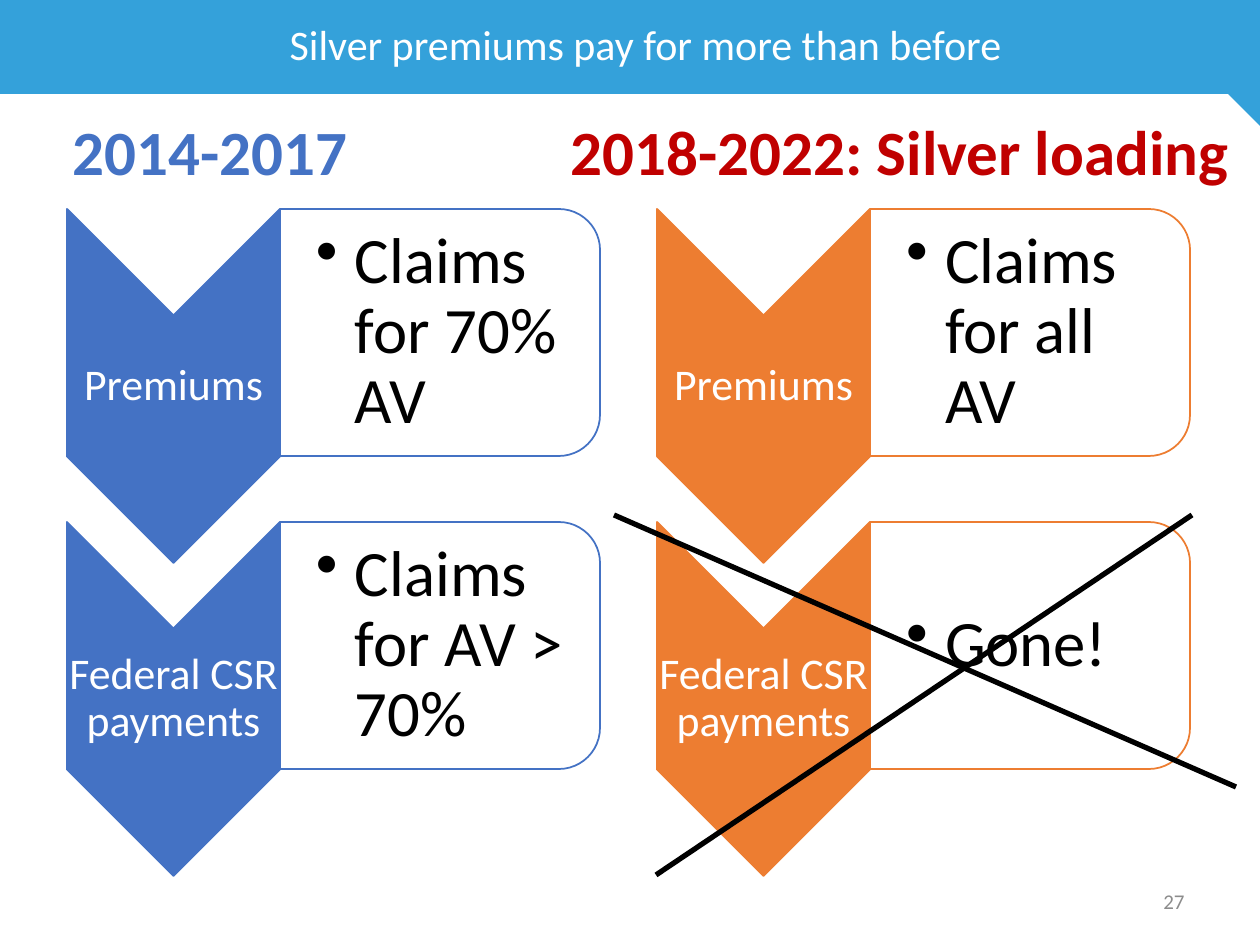
from lxml import etree
from pptx import Presentation
from pptx.dml.color import RGBColor
from pptx.enum.shapes import MSO_CONNECTOR, MSO_SHAPE
from pptx.enum.text import MSO_ANCHOR, PP_ALIGN
from pptx.oxml.ns import qn
from pptx.util import Pt

RECT, TRIANGLE = MSO_SHAPE.RECTANGLE, MSO_SHAPE.RIGHT_TRIANGLE
CHEVRON, ROUNDED = MSO_SHAPE.CHEVRON, MSO_SHAPE.ROUND_2_SAME_RECTANGLE
STRAIGHT = MSO_CONNECTOR.STRAIGHT
TOP, MIDDLE = MSO_ANCHOR.TOP, MSO_ANCHOR.MIDDLE
LEFT, CENTER = PP_ALIGN.LEFT, PP_ALIGN.CENTER

FONT = "Calibri"
SKY, BLUE, ORANGE, RED = "34A1DA", "4472C4", "ED7D31", "C00000"
WHITE, BLACK, GRAY = "FFFFFF", "000000", "8C8C8C"
CHEVRON_W, CHEVRON_H = 213, 354
BOX_W, BOX_H = 320, 247
ROW_PITCH = 313


def px(n):
    return round(n * 914400 / 126)


def rgb(value):
    return RGBColor.from_string(value)


def add_shape(s, kind, x, y, w, h, fill, line=None, rotation=0):
    if rotation == 90:
        x, y, w, h = x + (w - h) / 2, y + (h - w) / 2, h, w
    sp = s.shapes.add_shape(kind, px(x), px(y), px(w), px(h))
    sp.rotation = rotation
    sp.shadow.inherit = False
    sp.fill.solid()
    sp.fill.fore_color.rgb = rgb(fill)
    if line:
        sp.line.color.rgb = rgb(line)
        sp.line.width = Pt(1)
    else:
        sp.line.fill.background()
    return sp


def add_text(s, text, x, y, w, h, size, color, bold=False, align=LEFT,
             anchor=MIDDLE, insets=(13, 6, 13, 6), spacing=None, hang=0, wrap=True):
    tf = s.shapes.add_textbox(px(x), px(y), px(w), px(h)).text_frame
    tf.word_wrap = wrap
    tf.vertical_anchor = anchor
    tf.margin_left, tf.margin_top, tf.margin_right, tf.margin_bottom = map(px, insets)
    p = tf.paragraphs[0]
    if hang:
        pPr = p._p.get_or_add_pPr()
        pPr.set("marL", str(px(hang)))
        pPr.set("indent", str(-px(hang)))
        etree.SubElement(pPr, qn("a:buChar")).set("char", "•")
    p.alignment = align
    if spacing:
        p.line_spacing = spacing
    r = p.add_run()
    r.text = text
    r.font.name, r.font.size, r.font.bold = FONT, Pt(size), bold
    r.font.color.rgb = rgb(color)


def add_line(s, x1, y1, x2, y2):
    c = s.shapes.add_connector(STRAIGHT, px(x1), px(y1), px(x2), px(y2))
    c.line.color.rgb = rgb(BLACK)
    c.line.width = Pt(3)
    etree.SubElement(c._element.spPr, qn("a:effectLst"))


def add_header(s, x, y, w, h, title):
    add_shape(s, RECT, x, y, w, h, SKY)
    add_shape(s, TRIANGLE, x + w - 32, y + h, 32, 32, SKY, rotation=180)
    add_text(s, title, x + 67, y, w - 135, h, 24, WHITE, align=CENTER,
             insets=(45, 6, 13, 6), spacing=0.9)


def add_step(s, x, y, color, label, detail):
    notch = CHEVRON_W // 2
    add_shape(s, CHEVRON, x, y, CHEVRON_W, CHEVRON_H, color, color, 90)
    add_text(s, label, x, y + notch, CHEVRON_W, CHEVRON_H - 2 * notch, 25, WHITE,
             align=CENTER, insets=(2, 2, 2, 2), spacing=0.9)
    add_shape(s, ROUNDED, x + CHEVRON_W, y, BOX_W, BOX_H, WHITE, color, 90)
    add_text(s, detail, x + CHEVRON_W, y + 12, BOX_W - 12, BOX_H - 24, 37, BLACK,
             insets=(36, 3, 3, 3), spacing=0.9, hang=39)


def add_column(s, x, y, color, steps):
    for i, (label, detail) in enumerate(steps):
        add_step(s, x, y + i * ROW_PITCH, color, label, detail)


def add_cross(s, x, y):
    add_line(s, x, y, x + 622, y + 272)
    add_line(s, x + 578, y, x + 42, y + 360)


def main():
    prs = Presentation()
    prs.slide_width, prs.slide_height = px(1260), px(945)
    s = prs.slides.add_slide(prs.slide_layouts[6])
    add_header(s, 0, 0, 1260, 94, "Silver premiums pay for more than before")
    add_column(s, 67, 209, BLUE, [("Premiums", "Claims for 70% AV"),
                                  ("Federal CSR payments", "Claims for AV > 70%")])
    add_column(s, 657, 209, ORANGE, [("Premiums", "Claims for all AV"),
                                     ("Federal CSR payments", "Gone!")])
    add_text(s, "27", 1138, 876, 72, 50, 12, GRAY, align=CENTER)
    add_text(s, "2014-2017", 60, 107, 302, 89, 36, BLUE, bold=True, anchor=TOP, wrap=False)
    add_text(s, "2018-2022: Silver loading", 558, 107, 746, 89, 36, RED, bold=True, anchor=TOP)
    add_cross(s, 614, 515)
    prs.save("out.pptx")


if __name__ == "__main__":
    main()
